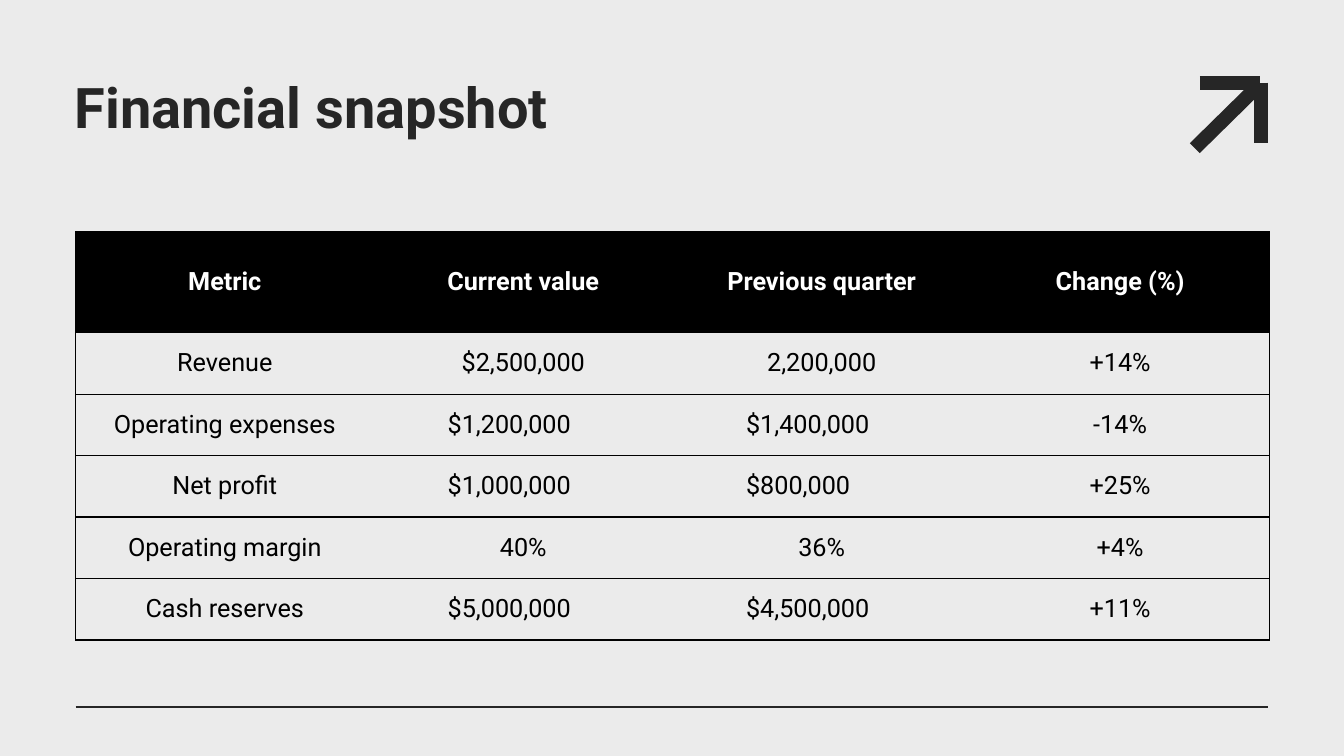
from dataclasses import dataclass

from lxml.etree import SubElement
from pptx import Presentation
from pptx.dml.color import RGBColor
from pptx.enum.shapes import MSO_CONNECTOR
from pptx.enum.text import MSO_ANCHOR, PP_ALIGN
from pptx.oxml.ns import qn
from pptx.slide import Slide
from pptx.table import _Cell as Cell
from pptx.text.text import _Paragraph as Paragraph
from pptx.util import Inches, Pt

FONT = "Roboto"
PAPER, INK, BLACK, WHITE = "EBEBEB", "262626", "000000", "FFFFFF"


@dataclass(frozen=True)
class Line:
    x1: float
    y1: float
    x2: float
    y2: float
    weight: float


ARROW = [
    Line(11.9, 0.82, 12.5, 0.82, 10),
    Line(12.51, 0.82, 12.51, 1.42, 10),
    Line(11.85, 1.47, 12.44, 0.89, 10),
]
FOOTER_RULE = Line(0.75, 7.01, 12.58, 7.01, 1.5)

# A trailing tab shifts a centred amount to the left.
FINANCIALS = [
    ("Metric", "Current value", "Previous quarter", "Change (%)"),
    ("Revenue", "$2,500,000", "2,200,000", "+14%"),
    ("Operating expenses", "$1,200,000\t", "$1,400,000\t", "-14%"),
    ("Net profit", "$1,000,000\t", "$800,000\t", "+25%"),
    ("Operating margin", "40%", "36%", "+4%"),
    ("Cash reserves", "$5,000,000\t", "$4,500,000\t", "+11%"),
]
COLUMN_WIDTH, HEADER_HEIGHT, ROW_HEIGHT = 2.96, 1, 0.61


def color(value: str) -> RGBColor:
    return RGBColor.from_string(value)


def add_line(slide: Slide, line: Line) -> None:
    connector = slide.shapes.add_connector(
        MSO_CONNECTOR.STRAIGHT,
        Inches(line.x1), Inches(line.y1), Inches(line.x2), Inches(line.y2),
    )
    connector.line.color.rgb = color(INK)
    connector.line.width = Pt(line.weight)
    SubElement(connector._element.spPr, qn("a:effectLst"))


def add_run(paragraph: Paragraph, text: str, size: float, fill: str, bold: bool) -> None:
    run = paragraph.add_run()
    run.text = text
    run.font.name = FONT
    run.font.size = Pt(size)
    run.font.bold = bold
    run.font.color.rgb = color(fill)


def add_title(slide: Slide, text: str) -> None:
    box = slide.shapes.add_textbox(Inches(0.74), Inches(0.76), Inches(11), Inches(1.4))
    frame = box.text_frame
    frame.word_wrap = True
    frame.margin_left = frame.margin_top = frame.margin_right = 0
    frame.margin_bottom = Inches(0.1)
    paragraph = frame.paragraphs[0]
    paragraph.line_spacing = Pt(45)
    add_run(paragraph, text, 40, INK, True)


def set_borders(cell: Cell, visible_sides: str) -> None:
    """Draw a thin black line on the given sides (of L, R, T, B) and none elsewhere."""
    properties = cell._tc.get_or_add_tcPr()
    for side in "LRTB":
        border = SubElement(properties, qn(f"a:ln{side}"), w=str(Pt(1)))
        if side in visible_sides:
            fill = SubElement(border, qn("a:solidFill"))
            SubElement(fill, qn("a:srgbClr"), val=BLACK)
        else:
            SubElement(border, qn("a:noFill"))


def add_financial_table(slide: Slide) -> None:
    row_count, column_count = len(FINANCIALS), len(FINANCIALS[0])
    height = HEADER_HEIGHT + ROW_HEIGHT * (row_count - 1)
    table = slide.shapes.add_table(
        row_count, column_count, Inches(0.75), Inches(2.3),
        Inches(COLUMN_WIDTH * column_count), Inches(height),
    ).table
    table.horz_banding = False
    for column in table.columns:
        column.width = Inches(COLUMN_WIDTH)

    for row_index, values in enumerate(FINANCIALS):
        is_header = row_index == 0
        table.rows[row_index].height = Inches(HEADER_HEIGHT if is_header else ROW_HEIGHT)
        for column_index, value in enumerate(values):
            cell = table.cell(row_index, column_index)
            left = "L" if column_index == 0 else ""
            right = "R" if column_index == column_count - 1 else ""
            set_borders(cell, "TB" + left + right)
            if is_header:
                cell.fill.solid()
                cell.fill.fore_color.rgb = color(BLACK)
            else:
                cell.fill.background()
            cell.vertical_anchor = MSO_ANCHOR.MIDDLE
            paragraph = cell.text_frame.paragraphs[0]
            paragraph.alignment = PP_ALIGN.CENTER
            add_run(paragraph, value, 18, WHITE if is_header else BLACK, is_header)


def main() -> None:
    presentation = Presentation()
    presentation.slide_width = Inches(13.33)
    presentation.slide_height = Inches(7.5)
    slide = presentation.slides.add_slide(presentation.slide_layouts[6])
    slide.background.fill.solid()
    slide.background.fill.fore_color.rgb = color(PAPER)

    for line in [*ARROW, FOOTER_RULE]:
        add_line(slide, line)
    add_title(slide, "Financial snapshot")
    add_financial_table(slide)
    presentation.save("out.pptx")


if __name__ == "__main__":
    main()
